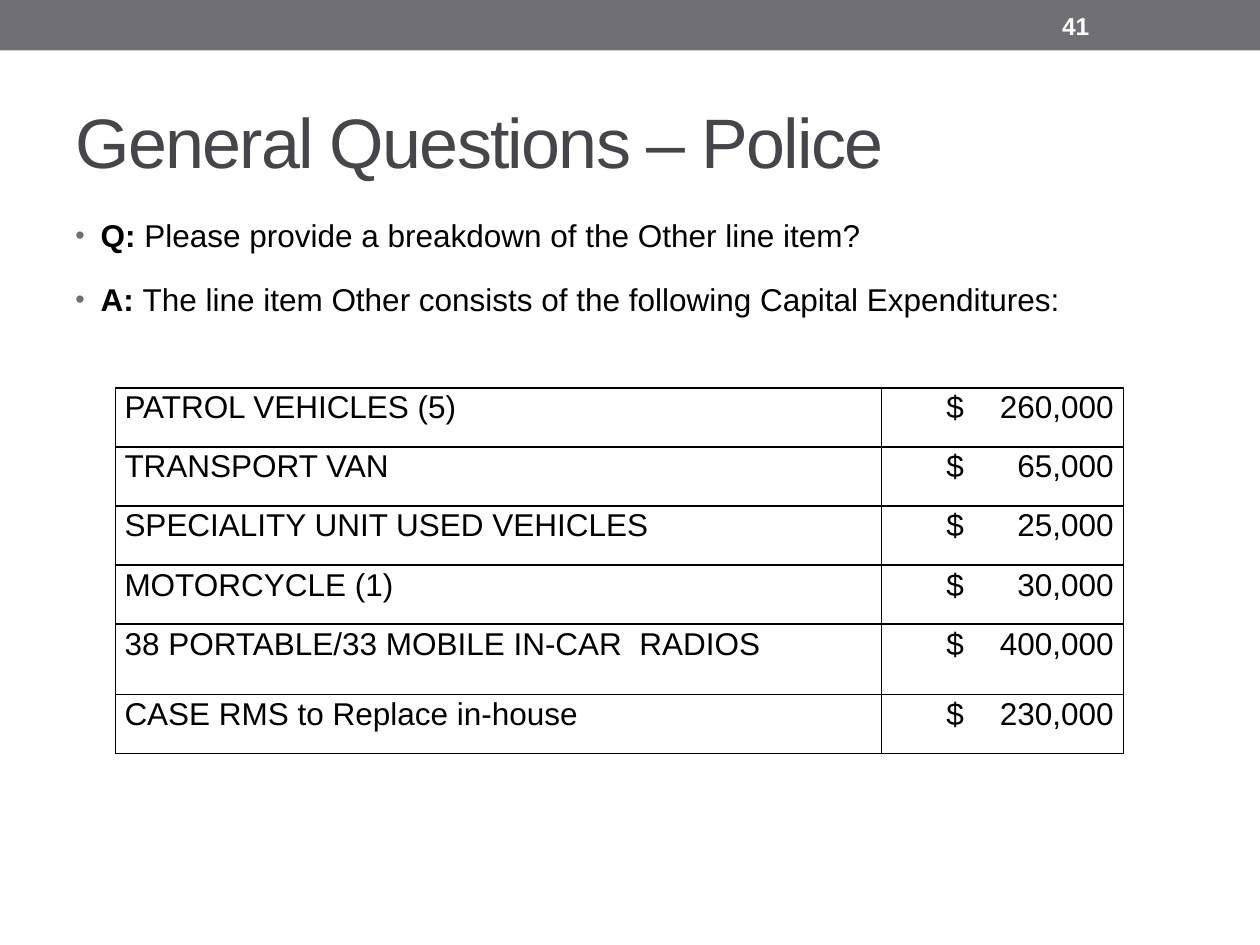
import pptx
import pptx.dml.color
import pptx.enum.shapes
import pptx.enum.text
import pptx.oxml.ns
import pptx.util
from lxml import etree

Cm = pptx.util.Cm
Pt = pptx.util.Pt
COLORS = {"band": "6F6F74", "title": "46464A", "text": "000000", "number": "FFFFFF"}
EXPENDITURES = [
    ("PATROL VEHICLES (5)", "260,000"),
    ("TRANSPORT VAN", "65,000"),
    ("SPECIALITY UNIT USED VEHICLES", "25,000"),
    ("MOTORCYCLE (1)", "30,000"),
    ("38 PORTABLE/33 MOBILE IN-CAR  RADIOS", "400,000"),
    ("CASE RMS to Replace in-house", "230,000"),
]


def rgb(name):
    """Return the named colour."""
    return pptx.dml.color.RGBColor.from_string(COLORS[name])


def add_xml(parent, tag, **attributes):
    """Append a DrawingML child element and return it."""
    return etree.SubElement(parent, pptx.oxml.ns.qn(f"a:{tag}"), attributes)


def set_font(paragraph, size, color, bold=None):
    """Format all the text of a paragraph."""
    font = paragraph.font
    font.name, font.size, font.bold = "Arial", Pt(size), bold
    font.color.rgb = rgb(color)


def add_header(slide, left, top, width, height):
    """Draw the top band with the slide number."""
    band = slide.shapes.add_shape(
        pptx.enum.shapes.MSO_SHAPE.RECTANGLE, left, top, width, height)
    band.shadow.inherit = False
    band.fill.solid()
    band.fill.fore_color.rgb = rgb("band")
    band.line.fill.background()
    number = slide.shapes.add_textbox(
        left + Cm(21.16), top + Cm(0.05), Cm(2.97), height - Cm(0.1)).text_frame
    number.word_wrap = True
    number.vertical_anchor = pptx.enum.text.MSO_ANCHOR.MIDDLE
    number.text = "41"
    set_font(number.paragraphs[0], 14, "number", True)


def place_title(slide, left, top, width, height):
    """Move and format the title placeholder."""
    title = slide.shapes.title
    title.left, title.top, title.width, title.height = left, top, width, height
    title.text_frame.text = "General Questions – Police"
    title.text_frame.vertical_anchor = pptx.enum.text.MSO_ANCHOR.MIDDLE
    heading = title.text_frame.paragraphs[0]
    heading.alignment = pptx.enum.text.PP_ALIGN.LEFT
    set_font(heading, 40, "title")
    heading.runs[0]._r.get_or_add_rPr().set("spc", "-100")


def add_bullet(paragraph, label, sentence):
    """Fill a bulleted paragraph with a bold label and a sentence."""
    properties = paragraph._p.get_or_add_pPr()
    properties.set("marL", str(Cm(0.51)))
    properties.set("indent", str(-Cm(0.51)))
    add_xml(add_xml(properties, "buClr"), "srgbClr", val=COLORS["band"])
    add_xml(properties, "buSzPct", val="85000")
    add_xml(properties, "buFont", typeface="Arial")
    add_xml(properties, "buChar", char="•")
    set_font(paragraph, 18, "text")
    for text, bold in ((label, True), (sentence, False)):
        run = paragraph.add_run()
        run.text, run.font.bold = text, bold


def add_dialogue(slide, left, top, width, height):
    """Write the question and its answer."""
    frame = slide.shapes.add_textbox(left, top, width, height).text_frame
    frame.word_wrap = True
    question, answer = frame.paragraphs[0], frame.add_paragraph()
    add_bullet(question, "Q: ", "Please provide a breakdown of the Other line item?")
    add_bullet(answer, "A: ", "The line item Other consists of the following "
                              "Capital Expenditures:")
    answer.alignment = pptx.enum.text.PP_ALIGN.JUSTIFY
    answer.line_spacing = 1.5
    answer.space_before = Pt(4)


def format_cell(cell, text, tabs=()):
    """Write one cell with black borders and optional tab stops."""
    cell.margin_left = cell.margin_right = Cm(0.18)
    cell.margin_top = cell.margin_bottom = 0
    for side in ("lnL", "lnR", "lnT", "lnB"):
        border = add_xml(cell._tc.get_or_add_tcPr(), side, w=str(Pt(1)))
        add_xml(add_xml(border, "solidFill"), "srgbClr", val=COLORS["text"])
    cell.fill.background()
    cell.text = text
    paragraph = cell.text_frame.paragraphs[0]
    paragraph.line_spacing = 1.07
    if tabs:
        stops = add_xml(paragraph._p.get_or_add_pPr(), "tabLst")
        for position, alignment in tabs:
            add_xml(stops, "tab", pos=str(position), algn=alignment)
    set_font(paragraph, 18, "text")


def add_expenditures(slide, left, top, width, height):
    """Build the table of capital expenditures."""
    table = slide.shapes.add_table(
        len(EXPENDITURES), 2, left, top, width, height).table
    table.first_row = table.horz_banding = False
    amount_width = Cm(4.88)
    table.columns[0].width = width - amount_width
    table.columns[1].width = amount_width
    tabs = ((Cm(1.13), "l"), (Cm(4.5), "r"))
    for index, (item, amount) in enumerate(EXPENDITURES):
        table.rows[index].height = Cm(1.42 if "RADIOS" in item else 1.19)
        format_cell(table.cell(index, 0), item)
        format_cell(table.cell(index, 1), f"\t$\t{amount}", tabs)


def main():
    """Build and save the slide."""
    deck = pptx.Presentation()
    deck.slide_width, deck.slide_height = Cm(25.4), Cm(19.05)
    slide = deck.slides.add_slide(deck.slide_layouts[5])
    add_header(slide, 0, 0, deck.slide_width, Cm(1.02))
    place_title(slide, Cm(1.27), Cm(1.47), Cm(22.86), Cm(2.74))
    add_dialogue(slide, Cm(1.27), Cm(4.24), Cm(23.29), Cm(14.4))
    add_expenditures(slide, Cm(2.33), Cm(7.82), Cm(20.32), Cm(7.37))
    deck.save("out.pptx")


if __name__ == "__main__":
    main()
